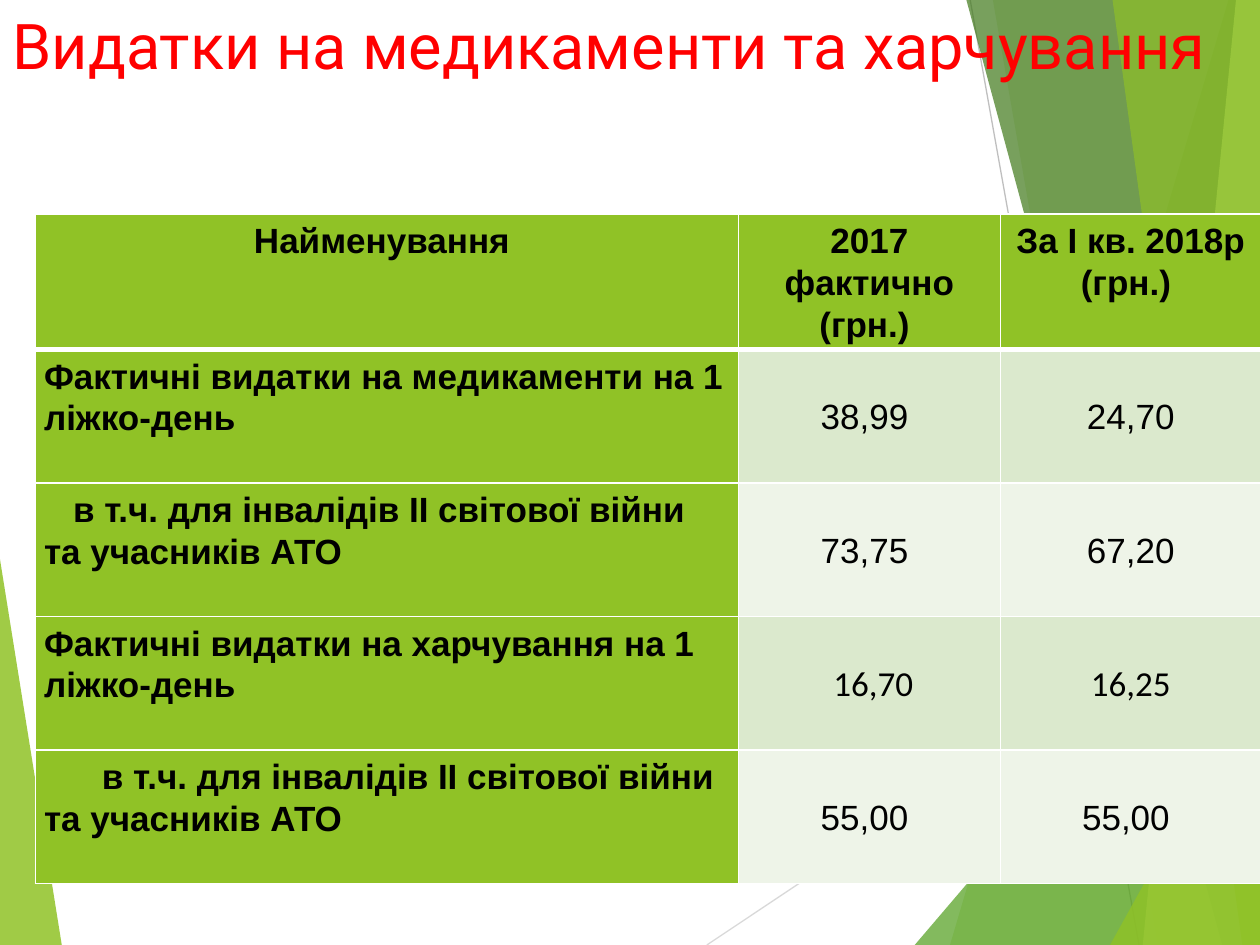
from dataclasses import dataclass

from lxml.etree import SubElement
from pptx import Presentation
from pptx.dml.color import RGBColor
from pptx.enum.shapes import MSO_CONNECTOR as Connector
from pptx.enum.text import MSO_ANCHOR as Anchor, MSO_AUTO_SIZE as AutoSize, PP_ALIGN as Align
from pptx.oxml.ns import qn
from pptx.util import Inches, Pt

WIDTH, HEIGHT = 10, 7.5


@dataclass(frozen=True)
class Theme:
    title: str = "FF0000"
    text: str = "000000"
    border: str = "FFFFFF"
    green: str = "90C226"
    leaf: str = "54A021"
    forest: str = "3F7819"
    lime: str = "C0E474"
    bands: tuple = ("DBE9CD", "EEF4E8")
    title_font: str = "Roboto"
    body_font: str = "Arial"
    number_font: str = "Calibri"
    title_size: int = 36
    body_size: int = 20


class SlideBuilder:
    def __init__(self, page, theme):
        self.page = page
        self.theme = theme

    def polygon(self, points, color, opacity):
        """Draw a borderless outline; opacity is in percent."""
        corners = [(Inches(x), Inches(y)) for x, y in points]
        builder = self.page.shapes.build_freeform(*corners[0], scale=1.0)
        builder.add_line_segments(corners[1:], close=True)
        shape = builder.convert_to_shape()
        shape.shadow.inherit = False
        shape.line.fill.background()
        shape.fill.solid()
        shape.fill.fore_color.rgb = RGBColor.from_string(color)
        color_node = shape._element.spPr.find(f"{qn('a:solidFill')}/{qn('a:srgbClr')}")
        SubElement(color_node, qn("a:alpha"), val=str(opacity * 1000))

    def line(self, start, end, color):
        ends = [Inches(value) for value in (*start, *end)]
        connector = self.page.shapes.add_connector(Connector.STRAIGHT, *ends)
        connector.line.color.rgb = RGBColor.from_string(color)
        connector.line.width = Pt(0.75)
        SubElement(connector._element.spPr, qn("a:effectLst"))

    def run(self, para, text, font, size, color, bold=False):
        span = para.add_run()
        span.text = text
        span.font.name = font
        span.font.size = Pt(size)
        span.font.bold = bold
        span.font.color.rgb = RGBColor.from_string(color)

    def title(self, text, left, top, width, height):
        """Fill the title placeholder and bring it in front of the decoration."""
        box = self.page.shapes.title
        box.left, box.top, box.width, box.height = map(Inches, (left, top, width, height))
        self.page.shapes._spTree.append(box._element)
        frame = box.text_frame
        frame.word_wrap = True
        frame.auto_size = AutoSize.NONE
        frame.vertical_anchor = Anchor.TOP
        para = frame.paragraphs[0]
        para.alignment = Align.LEFT
        self.run(para, text, self.theme.title_font, self.theme.title_size, self.theme.title)

    def borders(self, cell, top, bottom):
        properties = cell._tc.get_or_add_tcPr()
        for side, width in (("L", 1), ("R", 1), ("T", top), ("B", bottom)):
            edge = SubElement(properties, qn(f"a:ln{side}"), w=str(Pt(width)))
            fill = SubElement(edge, qn("a:solidFill"))
            SubElement(fill, qn("a:srgbClr"), val=self.theme.border)

    def cell(self, cell, text, fill, font, bold, centered, middle, indent=0):
        cell.fill.solid()
        cell.fill.fore_color.rgb = RGBColor.from_string(fill)
        cell.margin_left = cell.margin_right = Inches(0.07)
        cell.margin_top = cell.margin_bottom = Inches(0.04)
        cell.vertical_anchor = Anchor.MIDDLE if middle else Anchor.TOP
        para = cell.text_frame.paragraphs[0]
        para.alignment = Align.CENTER if centered else Align.LEFT
        para.line_spacing = 1.07
        if indent:
            para._p.get_or_add_pPr().set("indent", str(Inches(indent)))
        self.run(para, text, font, self.theme.body_size, self.theme.text, bold)

    def table(self, left, top, widths, row_height, header, rows):
        """Each row is (label, first-line indent, number font, values)."""
        theme = self.theme
        count = len(rows) + 1
        frame = self.page.shapes.add_table(
            count, len(widths), Inches(left), Inches(top),
            Inches(sum(widths)), Inches(row_height * count))
        table = frame.table
        for column, width in zip(table.columns, widths):
            column.width = Inches(width)
        for index, row in enumerate(table.rows):
            row.height = Inches(row_height)
            for cell in row.cells:
                self.borders(cell, 3 if index == 1 else 1, 3 if index == 0 else 1)
        for column, text in enumerate(header):
            self.cell(table.cell(0, column), text, theme.green, theme.body_font,
                      bold=True, centered=True, middle=False)
        for index, (label, indent, font, values) in enumerate(rows, start=1):
            self.cell(table.cell(index, 0), label, theme.green, theme.body_font,
                      bold=True, centered=False, middle=False, indent=indent)
            band = theme.bands[(index - 1) % 2]
            for column, value in enumerate(values, start=1):
                self.cell(table.cell(index, column), value, band, font,
                          bold=False, centered=True, middle=True)


def right_facet(top_x, bottom_x, top_y=0):
    """Outline between a slanted left edge and the right side of the slide."""
    return [(top_x, top_y), (bottom_x, HEIGHT), (WIDTH, HEIGHT), (WIDTH, top_y)]


def main():
    theme = Theme()
    deck = Presentation()
    deck.slide_width, deck.slide_height = Inches(WIDTH), Inches(HEIGHT)
    page = deck.slides.add_slide(deck.slide_layouts[5])
    slide = SlideBuilder(page, theme)

    slide.polygon([(0, 4.44), (0.49, HEIGHT), (0, HEIGHT)], theme.green, 85)
    slide.line((5.61, HEIGHT), (WIDTH, 4.57), "D9D9D9")
    slide.line((7.7, 0), (9.04, HEIGHT), "BFBFBF")
    facets = [
        (right_facet(9.75, 7.54), theme.green, 30),
        (right_facet(7.88, 9.19), theme.green, 20),
        (right_facet(WIDTH, 7.26, 4.29), theme.leaf, 72),
        (right_facet(7.67, 9.7), theme.forest, 70),
        (right_facet(9.81, 9.07), theme.lime, 70),
        (right_facet(8.83, 9.86), theme.green, 65),
        (right_facet(WIDTH, 8.81, 5.35), theme.green, 80),
    ]
    for points, color, opacity in facets:
        slide.polygon(points, color, opacity)

    slide.title("Видатки на медикаменти та харчування", 0, 0, 9.72, 1.15)
    veterans = "в т.ч. для інвалідів ІІ світової війни та учасників АТО"
    slide.table(
        0.28, 1.7, (5.58, 2.08, 2.07), 1.06,
        ("Найменування ", "2017 фактично (грн.) ", "За І кв. 2018р (грн.) "),
        [
            ("Фактичні видатки на медикаменти на 1 ліжко-день", 0,
             theme.body_font, ("38,99 ", "24,70")),
            (veterans, 0.23, theme.body_font, ("73,75 ", "67,20")),
            ("Фактичні видатки на харчування на 1 ліжко-день", 0,
             theme.number_font, (" 16,70", "16,25")),
            (veterans, 0.46, theme.body_font, ("55,00 ", "55,00 ")),
        ])
    deck.save("out.pptx")


if __name__ == "__main__":
    main()
